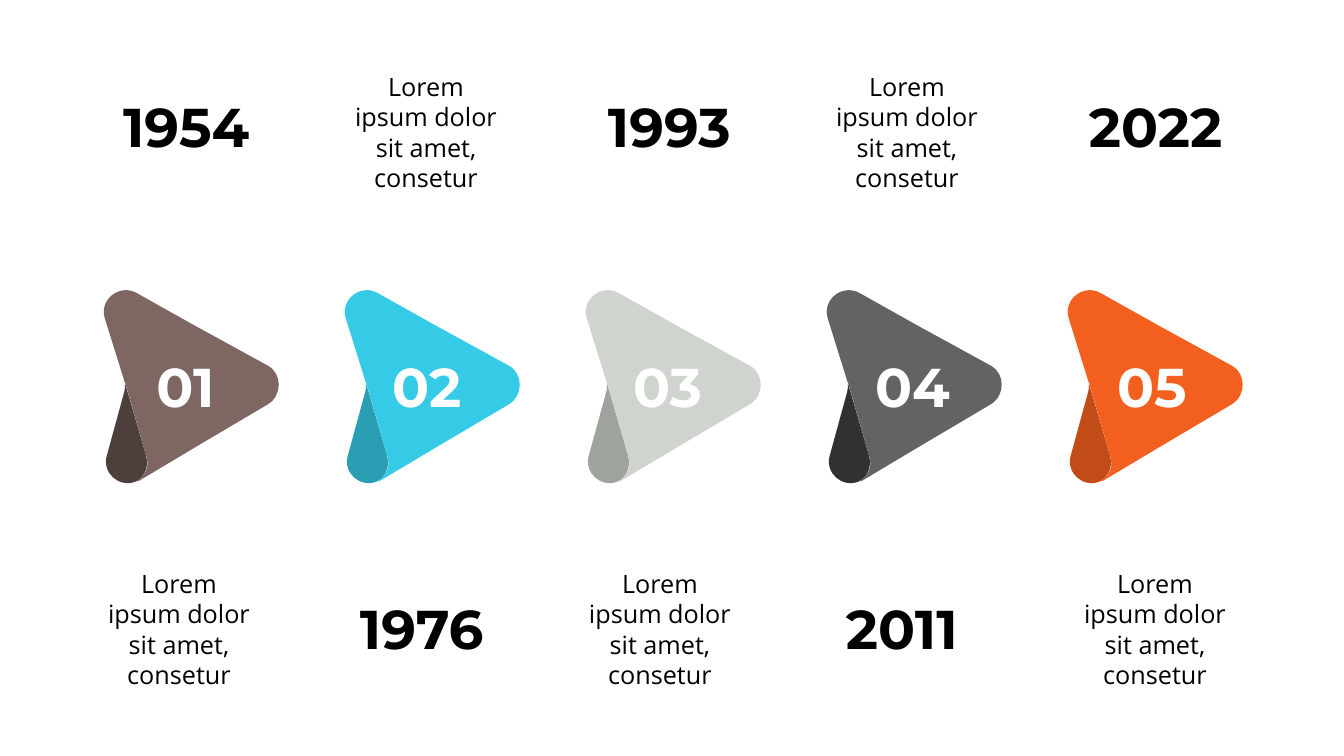
from dataclasses import dataclass
from pptx import Presentation
from pptx.dml.color import RGBColor
from pptx.enum.text import MSO_AUTO_SIZE, PP_ALIGN
from pptx.oxml.ns import qn
from pptx.util import Inches, Pt


@dataclass(frozen=True)
class Theme:
    ink: str = "000000"
    white: str = "FFFFFF"
    heading_font: str = "Montserrat"
    body_font: str = "Open Sans"
    heading_size: int = 39
    body_size: int = 18
    # Arrow and fold colour of each milestone
    arrows: tuple = (("7E6762", "4D3F3C"), ("35CAE6", "2A9FB4"), ("D0D4CE", "9FA39E"),
                     ("636363", "313131"), ("F25F1E", "C14C18"))


theme = Theme()
PITCH = 2.39

# Outlines of the first arrow: one point makes a straight side, three a Bezier curve
FOLD = [[(1.45, 4.52)], [(1.24, 3.8)], [(1.24, 3.83), (1.24, 3.87), (1.23, 3.9)],
        [(1.06, 4.52)], [(1.01, 4.69), (1.18, 4.84), (1.34, 4.78)],
        [(1.43, 4.74), (1.48, 4.64), (1.45, 4.52)]]
ARROW = [[(1.34, 4.78)], [(1.35, 4.78), (1.36, 4.77), (1.38, 4.77)], [(1.95, 4.43)],
         [(2.66, 4.01)], [(2.8, 3.92), (2.8, 3.71), (2.66, 3.63)], [(1.93, 3.23)],
         [(1.36, 2.91)], [(1.19, 2.81), (0.98, 2.97), (1.04, 3.16)], [(1.23, 3.77)],
         [(1.23, 3.78), (1.23, 3.79), (1.24, 3.79)], [(1.45, 4.52)],
         [(1.49, 4.64), (1.43, 4.74), (1.34, 4.78)]]

# Year, its left and width, number left and width, description left
MILESTONES = [("1954", 1.22, 1.52, 1.55, 0.91, 0.92),
              ("1976", 3.57, 1.53, 3.89, 1.02, 3.37),
              ("1993", 6.03, 1.54, 6.28, 1.02, 5.69),
              ("2011", 8.39, 1.46, 8.68, 1.02, 8.14),
              ("2022", 10.8, 1.68, 11.08, 1.02, 10.6)]

presentation = Presentation()
presentation.slide_width, presentation.slide_height = Inches(13.33), Inches(7.5)
slide = presentation.slides.add_slide(presentation.slide_layouts[6])


def add_text(text, left, top, width, height, *, color=theme.ink, font=theme.heading_font,
             size=theme.heading_size, bold=True, wrap=False, align=None, margins=(0, 0)):
    box = slide.shapes.add_textbox(Inches(left), Inches(top), Inches(width), Inches(height))
    frame = box.text_frame
    frame.word_wrap = wrap
    frame.auto_size = MSO_AUTO_SIZE.SHAPE_TO_FIT_TEXT
    frame.margin_left = frame.margin_right = Inches(margins[0])
    frame.margin_top = frame.margin_bottom = Inches(margins[1])
    paragraph = frame.paragraphs[0]
    paragraph.alignment = align
    run = paragraph.add_run()
    run.text = text
    run.font.name, run.font.size, run.font.bold = font, Pt(size), bold
    run.font.color.rgb = RGBColor.from_string(color)


def add_outline(segments, shift, color):
    start, *sides = segments
    # A straight side is a curve whose three points coincide
    points = [point for side in sides for point in (side if len(side) == 3 else side * 3)]
    corners = [(Inches(x + shift), Inches(y)) for x, y in start + points]
    builder = slide.shapes.build_freeform(*corners[0])
    builder.add_line_segments(corners[1:], close=True)
    outline = builder.convert_to_shape()
    # Gather each three line steps into one Bezier step
    steps = list(outline._element.iter(qn("a:lnTo")))
    for first, second, third in zip(steps[::3], steps[1::3], steps[2::3]):
        curve = first.makeelement(qn("a:cubicBezTo"), {})
        first.addprevious(curve)
        for step in (first, second, third):
            curve.append(step[0])
            step.getparent().remove(step)
    outline.shadow.inherit = False
    outline.fill.solid()
    outline.fill.fore_color.rgb = RGBColor.from_string(color)
    outline.line.fill.background()


# Folded arrows
for index, (arrow_color, fold_color) in enumerate(theme.arrows):
    add_outline(FOLD, index * PITCH, fold_color)
    add_outline(ARROW, index * PITCH, arrow_color)

# Numbers, years and descriptions
for index, milestone in enumerate(MILESTONES):
    year, year_left, year_width, number_left, number_width, description_left = milestone
    # Years and descriptions swap sides from one milestone to the next
    year_top, description_top = (0.92, 5.59) if index % 2 == 0 else (5.9, 0.66)
    add_text(f"{index + 1:02}", number_left, 3.5, number_width, 0.79, color=theme.white)
    add_text(year, year_left, year_top, year_width, 0.79)
    add_text("Lorem ipsum dolor sit amet, consetur", description_left, description_top, 1.71, 1.31,
             font=theme.body_font, size=theme.body_size, bold=False, wrap=True,
             align=PP_ALIGN.CENTER, margins=(0.1, 0.05))

presentation.save("out.pptx")
